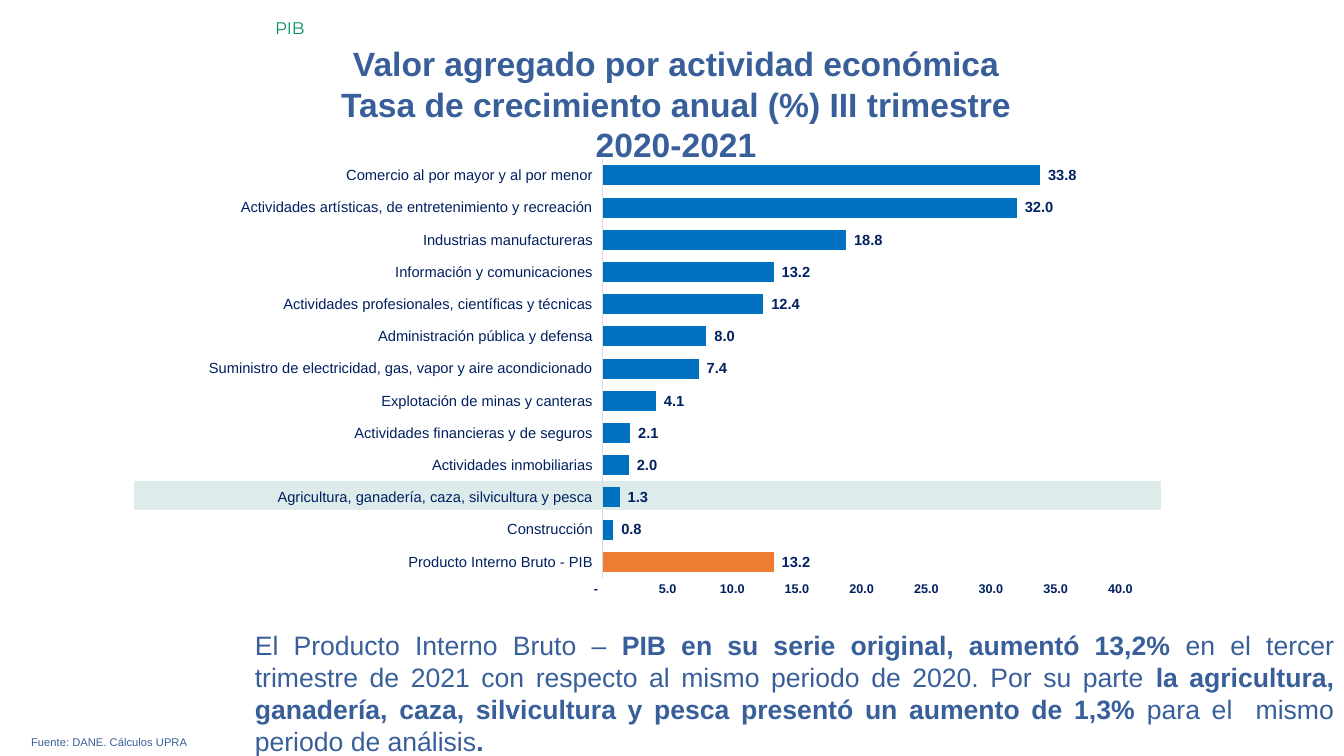
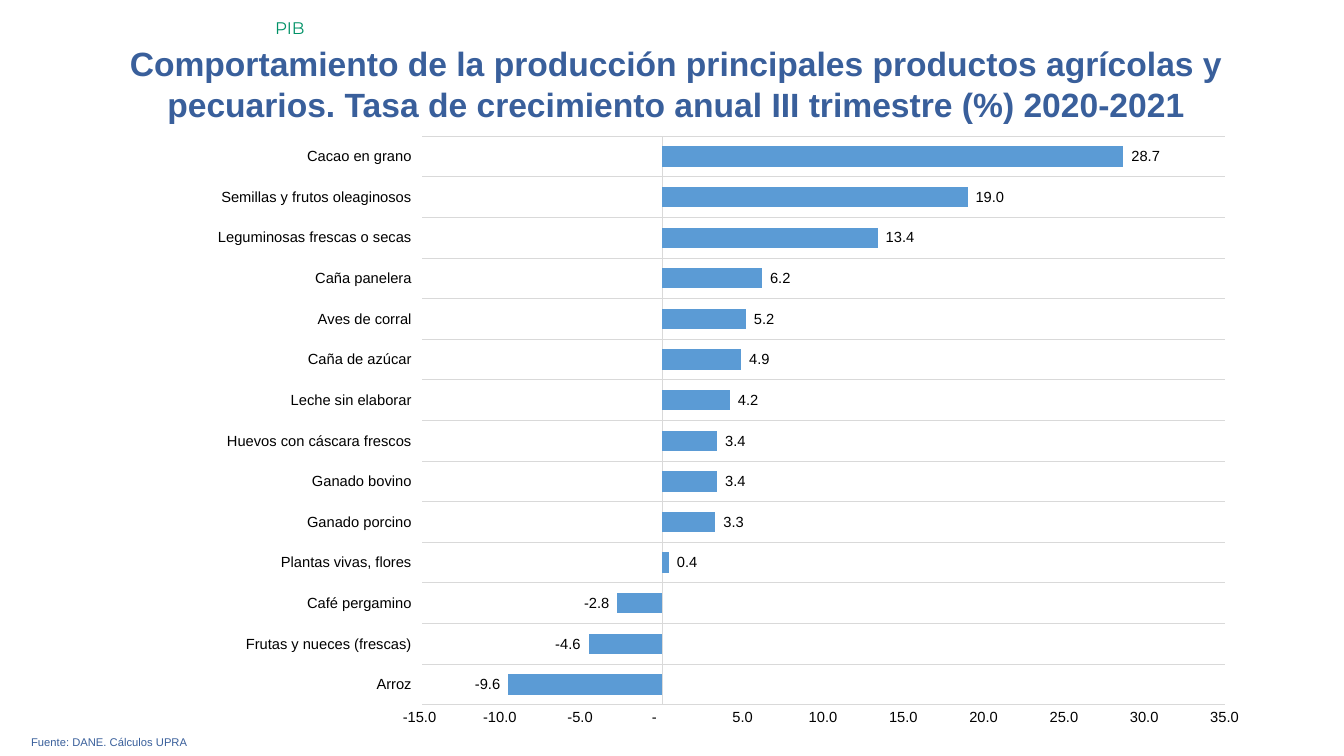
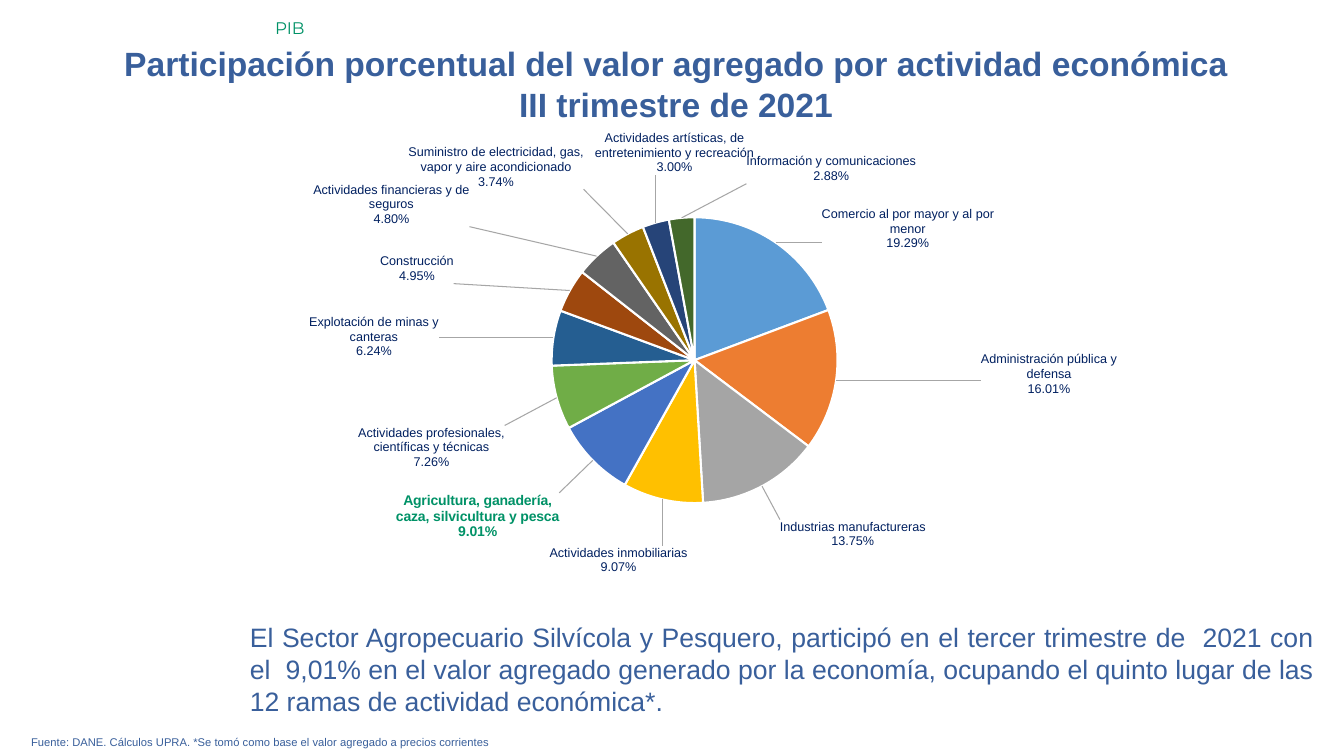
"""Build three slides on growth and shares of value added by economic activity."""
import pptx
import pptx.chart.data
import pptx.dml.color
import pptx.enum.chart
import pptx.enum.shapes
import pptx.enum.text
import pptx.oxml
import pptx.oxml.ns
import pptx.util

RGB = pptx.dml.color.RGBColor
ALIGN = pptx.enum.text.PP_ALIGN
XL = pptx.enum.chart
qn = pptx.oxml.ns.qn

SCALE = 9144
WHITE = RGB(0xFF, 0xFF, 0xFF)
BLACK = RGB(0x00, 0x00, 0x00)
INK = RGB(0x39, 0x5F, 0x9B)
NAVY = RGB(0x00, 0x20, 0x60)
GREEN = RGB(0x00, 0x92, 0x67)
TEAL = RGB(0x11, 0x7A, 0x76)
GRID = RGB(0xD9, 0xD9, 0xD9)
BLUE = RGB(0x00, 0x70, 0xC0)
SKY = RGB(0x5B, 0x9B, 0xD5)
ORANGE = RGB(0xED, 0x7D, 0x31)
SLICES = [SKY, ORANGE] + [RGB.from_string(c) for c in (
    "A5A5A5", "FFC000", "4472C4", "70AD47", "255E91",
    "9E480E", "636363", "997300", "264478", "43682B")]
NUMBER = '_-* #,##0.0_-;\\-* #,##0.0_-;_-* "-"??_-;'
SOURCE = "Fuente: DANE. Cálculos UPRA"

LABEL_FORMAT = (
    '<c:numFmt formatCode="0.00%" sourceLinked="0"/>'
    '<c:spPr><a:noFill/><a:ln><a:noFill/></a:ln></c:spPr>'
    '<c:txPr><a:bodyPr wrap="square"/><a:lstStyle/><a:p><a:pPr>'
    '<a:defRPr sz="{size}" b="{bold}"><a:solidFill><a:srgbClr val="{color}"/></a:solidFill>'
    '<a:latin typeface="Arial"/></a:defRPr></a:pPr><a:endParaRPr lang="es-CO"/></a:p></c:txPr>'
    '<c:dLblPos val="outEnd"/><c:showLegendKey val="0"/><c:showVal val="0"/>'
    '<c:showCatName val="1"/><c:showSerName val="0"/><c:showPercent val="1"/>'
    '<c:showBubbleSize val="0"/><c:separator>\n</c:separator>')
LEADERS = (
    '<c:showLeaderLines val="1"/><c:leaderLines><c:spPr><a:ln w="9525"><a:solidFill>'
    '<a:srgbClr val="A6A6A6"/></a:solidFill></a:ln></c:spPr></c:leaderLines>')

GROWTH = [
    ("Producto Interno Bruto - PIB", 13.2),
    ("Construcción", 0.8),
    ("Agricultura, ganadería, caza, silvicultura y pesca", 1.3),
    ("Actividades inmobiliarias", 2.0),
    ("Actividades financieras y de seguros", 2.1),
    ("Explotación de minas y canteras", 4.1),
    ("Suministro de electricidad, gas, vapor y aire acondicionado", 7.4),
    ("Administración pública y defensa", 8.0),
    ("Actividades profesionales, científicas y técnicas", 12.4),
    ("Información y comunicaciones", 13.2),
    ("Industrias manufactureras", 18.8),
    ("Actividades artísticas, de entretenimiento y recreación", 32.0),
    ("Comercio al por mayor y al por menor", 33.8),
]
PRODUCTS = [
    ("Arroz", -9.6),
    ("Frutas y nueces (frescas)", -4.6),
    ("Café pergamino", -2.8),
    ("Plantas vivas, flores", 0.4),
    ("Ganado porcino", 3.3),
    ("Ganado bovino", 3.4),
    ("Huevos con cáscara frescos", 3.4),
    ("Leche sin elaborar", 4.2),
    ("Caña de azúcar", 4.9),
    ("Aves de corral", 5.2),
    ("Caña panelera", 6.2),
    ("Leguminosas frescas o secas", 13.4),
    ("Semillas y frutos oleaginosos", 19.0),
    ("Cacao en grano", 28.7),
]
SHARES = [
    ("Comercio al por mayor y al por menor", 19.29, (42, 13)),
    ("Administración pública y defensa", 16.01, (138, -29)),
    ("Industrias manufactureras", 13.75, (15, 28)),
    ("Actividades inmobiliarias", 9.07, (26, 40)),
    ("Agricultura, ganadería, caza, silvicultura y pesca", 9.01, (-29, 28)),
    ("Actividades profesionales, científicas y técnicas", 7.26, (-46, 26)),
    ("Explotación de minas y canteras", 6.24, (-108, 22)),
    ("Construcción", 4.95, (-110, -4)),
    ("Actividades financieras y de seguros", 4.8, (-122, -25)),
    ("Suministro de electricidad, gas, vapor y aire acondicionado", 3.74, (-41, -39)),
    ("Actividades artísticas, de entretenimiento y recreación", 3.0, (99, -42)),
    ("Información y comunicaciones", 2.88, (233, -28)),
]
FARMING = 4


def manual_layout(**parts):
    tags = "".join(f'<c:{tag} val="{value}"/>' for tag, value in parts.items())
    return f"<c:layout><c:manualLayout>{tags}</c:manualLayout></c:layout>"


def chart_xml(tag, body):
    return pptx.oxml.parse_xml(
        f'<c:{tag} {pptx.oxml.ns.nsdecls("c", "a")}>{body}</c:{tag}>')


class Deck:
    def __init__(self):
        self.prs = pptx.Presentation()
        self.prs.slide_width, self.prs.slide_height = self.px(1333, 750)
        self.s = None

    def px(self, *lengths):
        return [pptx.util.Emu(n * SCALE) for n in lengths]

    def style(self, font, size, color, bold=False, name="Arial"):
        font.name, font.size, font.bold = name, pptx.util.Pt(size), bold
        font.color.rgb = color

    def slide(self, title, source, title_height=91):
        self.s = self.prs.slides.add_slide(self.prs.slide_layouts[6])
        self.text((45, 38, 1251, title_height), title, 24, bold=True, align=ALIGN.CENTER)
        self.text((21, 725, 1291, 24), source, 8, align=ALIGN.JUSTIFY)
        self.text((263, 13, 1070, 30), "PIB", 12, GREEN, name="Montserrat")

    def frame(self, box):
        tf = self.s.shapes.add_textbox(*self.px(*box)).text_frame
        tf.word_wrap = True
        tf.auto_size = pptx.enum.text.MSO_AUTO_SIZE.SHAPE_TO_FIT_TEXT
        return tf

    def text(self, box, text, size, color=INK, bold=False, align=ALIGN.LEFT, name="Arial"):
        tf = self.frame(box)
        tf.text = text
        for p in tf.paragraphs:
            p.alignment = align
            for r in p.runs:
                self.style(r.font, size, color, bold, name)

    def body(self, box, parts, level=0):
        p = self.frame(box).paragraphs[0]
        p.alignment, p.level = ALIGN.JUSTIFY, level
        for text, bold in parts:
            r = p.add_run()
            r.text = text
            self.style(r.font, 19, INK, bold)

    def highlight(self, box):
        sp = self.s.shapes.add_shape(pptx.enum.shapes.MSO_SHAPE.RECTANGLE, *self.px(*box))
        sp.shadow.inherit = False
        sp.fill.solid()
        sp.fill.fore_color.rgb = TEAL
        sp.line.color.rgb = WHITE
        sp.line.width = pptx.util.Pt(1)
        color = sp.fill._xPr.find(".//" + qn("a:srgbClr"))
        color.append(pptx.oxml.parse_xml(
            f'<a:alpha {pptx.oxml.ns.nsdecls("a")} val="14000"/>'))

    def chart(self, kind, box, cats, vals, size, color):
        data = pptx.chart.data.CategoryChartData()
        data.categories = cats
        data.add_series("Series 1", vals)
        chart = self.s.shapes.add_chart(kind, *self.px(*box), data).chart
        chart.has_legend = chart.has_title = False
        self.style(chart.font, size, color)
        return chart

    def bars(self, box, rows, fill, color, limits, gap, overlap=0, bold=False,
             axis_size=10.5, grid=False):
        cats, vals = zip(*rows)
        chart = self.chart(XL.XL_CHART_TYPE.BAR_CLUSTERED, box, cats, vals, 10.5, color)
        plot = chart.plots[0]
        plot.gap_width, plot.overlap, plot.vary_by_categories = gap, overlap, False
        ser = plot.series[0]
        ser.invert_if_negative = False
        ser.format.fill.solid()
        ser.format.fill.fore_color.rgb = fill
        labels = ser.data_labels
        labels.show_value = True
        labels.position = XL.XL_LABEL_POSITION.OUTSIDE_END
        labels.number_format, labels.number_format_is_linked = NUMBER, False
        self.style(labels.font, 10.5, color, bold)

        cat, val = chart.category_axis, chart.value_axis
        for axis in (cat, val):
            axis.major_tick_mark = axis.minor_tick_mark = XL.XL_TICK_MARK.NONE
            axis.has_major_gridlines = False
        cat.tick_label_position = XL.XL_TICK_LABEL_POSITION.LOW
        self.style(cat.tick_labels.font, 10.5, color)
        cat.has_major_gridlines = grid
        lines = [cat.format.line] + ([cat.major_gridlines.format.line] if grid else [])
        for line in lines:
            line.color.rgb = GRID
            line.width = pptx.util.Pt(0.75)
        val.minimum_scale, val.maximum_scale = limits
        val.major_unit = 5
        val.format.line.fill.background()
        val.tick_labels.number_format = NUMBER
        val.tick_labels.number_format_is_linked = False
        self.style(val.tick_labels.font, axis_size, color, bold)
        return ser

    def pie(self, box, rows, accent):
        cats, vals, offsets = zip(*rows)
        chart = self.chart(XL.XL_CHART_TYPE.PIE, box, cats, vals, 9, NAVY)
        area = chart._chartSpace.find(".//" + qn("c:plotArea"))
        for old in area.findall(qn("c:layout")):
            area.remove(old)
        layout = manual_layout(layoutTarget="inner", xMode="edge", yMode="edge",
                               x=0.194, y=0.175, w=0.661, h=0.58)
        area.insert(0, chart_xml("plotArea", layout)[0])
        chart.plots[0].vary_by_categories = True
        ser = chart.plots[0].series[0]
        labels = ""
        plain = LABEL_FORMAT.format(size=900, bold=0, color=NAVY)
        strong = LABEL_FORMAT.format(size=1000, bold=1, color=GREEN)
        for i, (dx, dy) in enumerate(offsets):
            fmt = ser.points[i].format
            fmt.fill.solid()
            fmt.fill.fore_color.rgb = SLICES[i]
            fmt.line.color.rgb = WHITE
            fmt.line.width = pptx.util.Pt(1.5)
            place = manual_layout(x=round(dx / box[2], 4), y=round(dy / box[3], 4))
            look = strong if i == accent else plain
            labels += f'<c:dLbl><c:idx val="{i}"/>{place}{look}</c:dLbl>'
        ser._element.find(qn("c:cat")).addprevious(
            chart_xml("dLbls", labels + plain + LEADERS))


def main():
    deck = Deck()

    deck.slide("Valor agregado por actividad económica\n"
               "Tasa de crecimiento anual (%) III trimestre\n2020-2021", SOURCE, 131)
    deck.body((243, 619, 1090, 138), [
        ("El Producto Interno Bruto – ", False),
        ("PIB en su serie original, aumentó 13,2% ", True),
        ("en el tercer trimestre de 2021 con respecto al mismo periodo de 2020. "
         "Por su parte ", False),
        ("la agricultura, ganadería, caza, silvicultura y pesca presentó "
         "un aumento de 1,3%", True),
        (" para el  mismo periodo de análisis", False),
        (".", True)])
    deck.highlight((132, 477, 1020, 30))
    ser = deck.bars((188, 149, 958, 452), GROWTH, BLUE, NAVY, (0, 40), 61,
                    overlap=65, bold=True, axis_size=9)
    total = ser.points[0].format.fill
    total.solid()
    total.fore_color.rgb = ORANGE

    deck.slide("Comportamiento de la producción principales productos agrícolas y "
               "pecuarios. Tasa de crecimiento anual III trimestre (%) 2020-2021", SOURCE)
    deck.bars((195, 123, 1059, 609), PRODUCTS, SKY, BLACK, (-15, 35), 100, grid=True)

    deck.slide("Participación porcentual del valor agregado por actividad económica\n"
               "III trimestre de 2021",
               SOURCE + ". *Se tomó como base el valor agregado a precios corrientes")
    deck.body((188, 611, 1125, 106), [
        ("El Sector Agropecuario Silvícola y Pesquero, participó en el tercer trimestre "
         "de  2021 con el  9,01% en el valor agregado generado por la economía, ocupando "
         "el quinto lugar de las 12 ramas de actividad económica*.", False)], level=1)
    deck.pie((219, 130, 896, 489), SHARES, FARMING)

    deck.prs.save("out.pptx")


if __name__ == "__main__":
    main()
